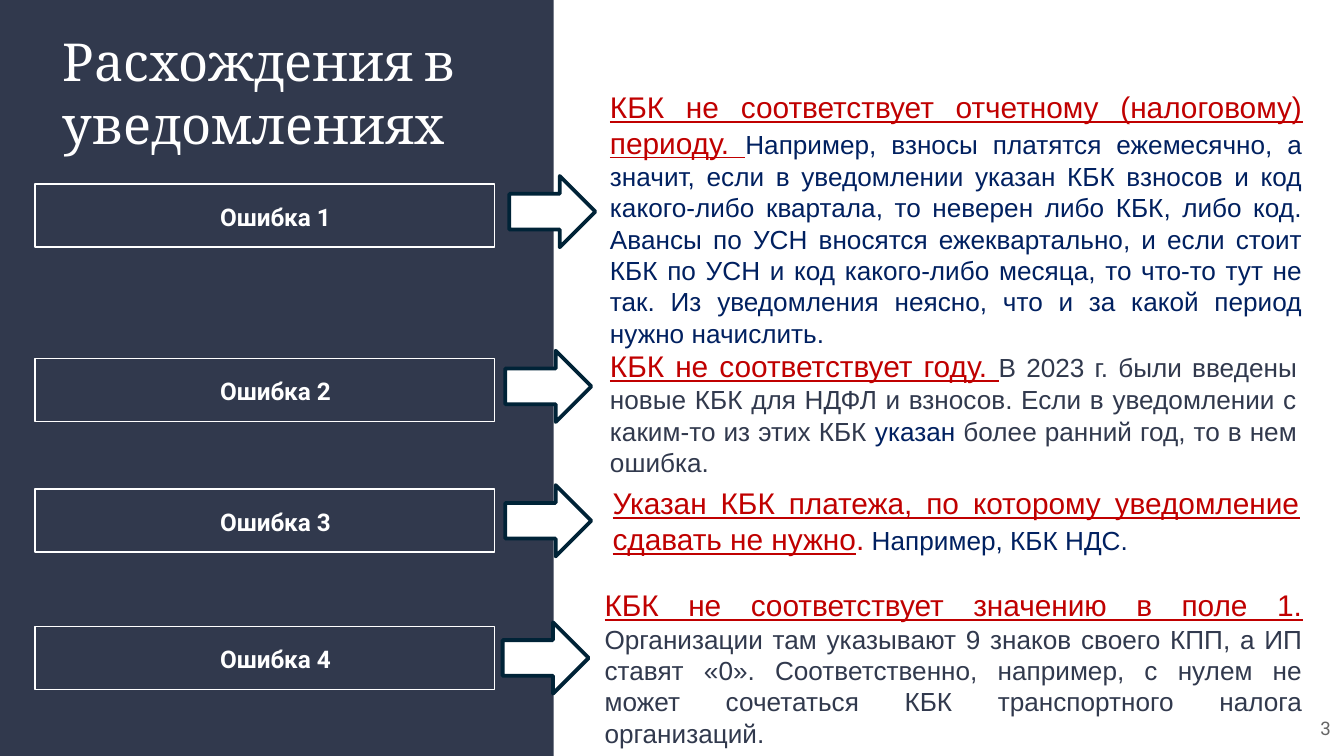
from dataclasses import dataclass
from typing import NamedTuple

from pptx import Presentation
from pptx.dml.color import RGBColor
from pptx.enum.shapes import MSO_SHAPE
from pptx.enum.text import MSO_ANCHOR, PP_ALIGN
from pptx.util import Pt

COLORS = {
    "panel": "31394D",
    "white": "FFFFFF",
    "outline": "002337",
    "red": "C00000",
    "navy": "002060",
    "gray": "666666",
}


class Run(NamedTuple):
    text: str
    color: str
    size: float = 14
    underline: bool = False
    font: str = "Arial"
    bold: bool = False


class Box(NamedTuple):
    left: float
    top: float
    width: float
    height: float


@dataclass
class Mistake:
    label_top: float
    arrow_left: float
    arrow_top: float
    box: Box
    runs: list[Run]
    space: float = 0


def heading(text: str) -> Run:
    return Run(text, "red", 16, True)


MISTAKES = [
    Mistake(98.6, 272.9, 94.3, Box(319.7, 43.9, 385.2, 152.6), [
        heading("КБК не соответствует отчетному (налоговому) периоду. "),
        Run("Например, взносы платятся ежемесячно, а значит, если в уведомлении "
            "указан КБК взносов и код какого-либо квартала, то неверен либо КБК, "
            "либо код. Авансы по УСН вносятся ежеквартально, и если стоит КБК по "
            "УСН и код какого-либо месяца, то что-то тут не так. Из уведомления "
            "неясно, что и за какой период нужно начислить.", "navy"),
    ]),
    Mistake(192.2, 270.7, 187.9, Box(319.7, 182.9, 382.3, 77.8), [
        heading("КБК не соответствует году. "),
        Run("В 2023 г. были введены новые КБК для НДФЛ и взносов. Если в "
            "уведомлении с каким-то из этих КБК ", "panel"),
        Run("указан", "navy"),
        Run(" более ранний год, то в нем ошибка.", "panel"),
    ]),
    Mistake(262.1, 270.7, 259.9, Box(321.1, 256.3, 382.3, 46.1), [
        heading("Указан КБК платежа, по которому уведомление сдавать не нужно"),
        Run(".", "red", 16),
        Run(" Например, КБК НДС.", "navy"),
    ], 12),
    Mistake(335.5, 269.3, 333.4, Box(316.8, 311, 388.1, 94.3), [
        heading("КБК не соответствует значению в поле 1. "),
        Run("Организации там указывают 9 знаков своего КПП, а ИП ставят «0». "
            "Соответственно, например, с нулем не может сочетаться КБК "
            "транспортного налога организаций.", "panel"),
    ]),
]


def rgb(name: str) -> RGBColor:
    return RGBColor.from_string(COLORS[name])


def add_text(sp, runs: list[Run], align=PP_ALIGN.LEFT, inset: float = 7.2,
             anchor=MSO_ANCHOR.TOP):
    tf = sp.text_frame
    tf.word_wrap = True
    tf.vertical_anchor = anchor
    tf.margin_left = tf.margin_right = Pt(7.2)
    tf.margin_top = tf.margin_bottom = Pt(inset)
    p = tf.paragraphs[0]
    p.alignment = align
    for run in runs:
        r = p.add_run()
        r.text = run.text
        r.font.name = run.font
        r.font.size = Pt(run.size)
        r.font.bold = run.bold
        r.font.underline = run.underline
        r.font.color.rgb = rgb(run.color)
    return p


def add_textbox(s, box: Box, runs: list[Run], **options):
    sp = s.shapes.add_textbox(*map(Pt, box))
    return add_text(sp, runs, **options)


def add_shape(s, kind, box: Box, fill: str = "", line: str = "", weight: float = 0):
    sp = s.shapes.add_shape(kind, *map(Pt, box))
    sp.shadow.inherit = False
    if fill:
        sp.fill.solid()
        sp.fill.fore_color.rgb = rgb(fill)
    else:
        sp.fill.background()
    if line:
        sp.line.color.rgb = rgb(line)
        sp.line.width = Pt(weight)
    else:
        sp.line.fill.background()
    return sp


def add_mistake(s, number: int, m: Mistake) -> None:
    label = add_shape(s, MSO_SHAPE.RECTANGLE, Box(18.7, m.label_top, 246.2, 33.8),
                      line="white", weight=0.75)
    p = add_text(label, [Run(f"Ошибка {number}", "white", 13, font="Roboto", bold=True)],
                 PP_ALIGN.CENTER)
    p.line_spacing = 1.15
    pPr = p._p.get_or_add_pPr()
    pPr.set("marL", str(Pt(11.5)))
    pPr.set("indent", "0")
    add_shape(s, MSO_SHAPE.RIGHT_ARROW, Box(m.arrow_left, m.arrow_top, 46.1, 38.2),
              "white", "outline", 2)
    p = add_textbox(s, m.box, m.runs, align=PP_ALIGN.JUSTIFY, inset=3.6)
    p.space_before = p.space_after = Pt(m.space)


def main() -> None:
    prs = Presentation()
    prs.slide_width, prs.slide_height = Pt(720), Pt(405)
    s = prs.slides.add_slide(prs.slide_layouts[6])
    add_shape(s, MSO_SHAPE.RECTANGLE, Box(0, 0, 296.6, 405), "panel")
    add_textbox(s, Box(26.6, 8.6, 246.2, 144),
                [Run("Расхождения в уведомлениях", "white", 28, font="Cambria")])
    add_textbox(s, Box(676.8, 374.4, 43.2, 31), [Run("3", "gray", 10, font="Roboto")],
                align=PP_ALIGN.RIGHT, anchor=MSO_ANCHOR.MIDDLE)
    for number, mistake in enumerate(MISTAKES, 1):
        add_mistake(s, number, mistake)
    prs.save("out.pptx")


if __name__ == "__main__":
    main()
